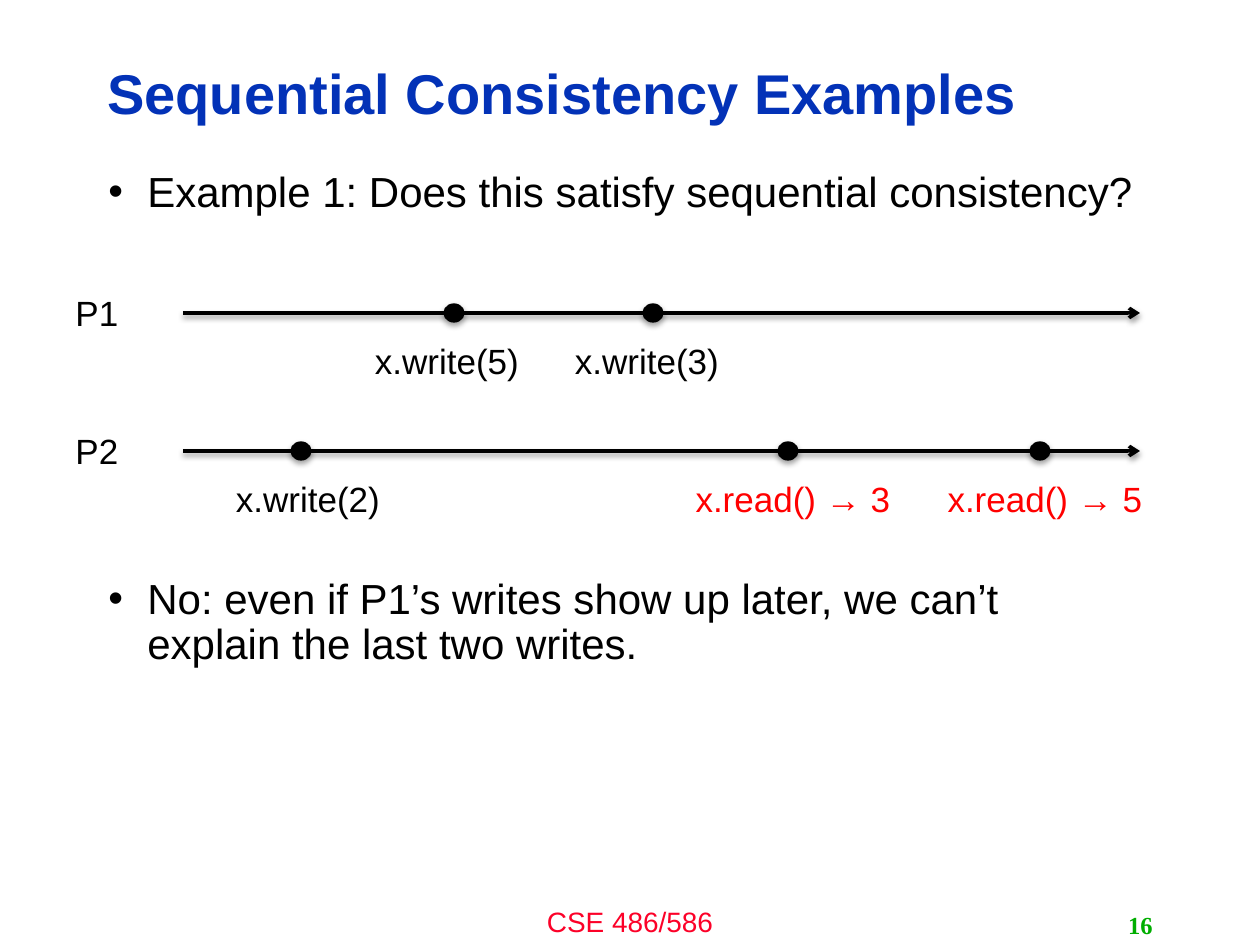
from lxml.etree import SubElement
from pptx import Presentation
from pptx.dml.color import RGBColor
from pptx.enum.shapes import MSO_CONNECTOR, MSO_SHAPE
from pptx.enum.text import MSO_ANCHOR, PP_ALIGN
from pptx.oxml import parse_xml
from pptx.oxml.ns import nsdecls, qn
from pptx.util import Pt

PX = 914400 / 126
COLORS = {"title": "0332B7", "text": "000000", "read": "FF0000",
          "footer": "FC0128", "number": "00AE00"}


def add_text(x, y, w, h, paragraphs, size, color, align=PP_ALIGN.LEFT,
             anchor=MSO_ANCHOR.TOP, font="Arial", bold=False):
    box = s.shapes.add_textbox(*[round(v * PX) for v in (x, y, w, h)])
    tf = box.text_frame
    tf.word_wrap = True
    tf.vertical_anchor = anchor
    for i, text in enumerate(paragraphs):
        p = tf.add_paragraph() if i else tf.paragraphs[0]
        p.alignment = align
        r = p.add_run()
        r.text = text
        r.font.name = font
        r.font.size = Pt(size)
        r.font.bold = bold
        r.font.color.rgb = RGBColor.from_string(COLORS[color])
    return box


def add_shadow(shape, dist, alpha):
    shape._element.spPr.append(parse_xml(
        f'<a:effectLst {nsdecls("a")}><a:outerShdw blurRad="40000" dist="{dist}" '
        f'dir="5400000" rotWithShape="0"><a:srgbClr val="000000">'
        f'<a:alpha val="{alpha}"/></a:srgbClr></a:outerShdw></a:effectLst>'))


prs = Presentation()
prs.slide_width = round(1260 * PX)
prs.slide_height = round(945 * PX)
s = prs.slides.add_slide(prs.slide_layouts[6])
black = RGBColor.from_string(COLORS["text"])

# Title, footer and page number
title = add_text(95, 45, 1005, 102, ["Sequential Consistency Examples"], 32, "title",
                 anchor=MSO_ANCHOR.MIDDLE, bold=True)
title.text_frame.paragraphs[0].line_spacing = 0.9
add_text(420, 898, 420, 47, ["CSE 486/586"], 16, "footer", PP_ALIGN.CENTER)
add_text(903, 905, 262, 40, ["16"], 14, "number", PP_ALIGN.RIGHT,
         MSO_ANCHOR.MIDDLE, "Times New Roman", True)

# Question above the timelines, answer below them
body = add_text(96, 165, 1058, 679, [
    "Example 1: Does this satisfy sequential consistency?",
    "No: even if P1’s writes show up later, we can’t explain the last two writes.",
], 24, "text")
for p in body.text_frame.paragraphs:
    p.line_spacing = 0.9
    pPr = p._p.get_or_add_pPr()
    pPr.set("marL", str(round(39 * PX)))
    pPr.set("indent", str(round(-39 * PX)))
    SubElement(pPr, qn("a:buFont"), typeface="Arial")
    SubElement(pPr, qn("a:buChar"), char="•")
body.text_frame.paragraphs[1].space_before = Pt(206.5)

# Process timelines: name, line y, events (dot x, label x, label, colour)
timelines = [
    ("P1", 313, [(454, 447, "x.write(5)", "text"),
                 (653, 647, "x.write(3)", "text")]),
    ("P2", 451, [(301, 308, "x.write(2)", "text"),
                 (788, 793, "x.read() → 3", "read"),
                 (1040, 1045, "x.read() → 5", "read")]),
]
for name, y, events in timelines:
    label = add_text(63, y - 28, 120, 56, [name], 20, "text")
    line = s.shapes.add_connector(
        MSO_CONNECTOR.STRAIGHT, round(183 * PX), round(y * PX),
        round(1140 * PX), round(y * PX))
    line.begin_connect(label, 3)
    line.line.color.rgb = black
    line.line.width = Pt(2)
    SubElement(line.line._get_or_add_ln(), qn("a:tailEnd"), type="arrow")
    add_shadow(line, 20000, 38000)

    for dot_x, label_x, text, color in events:
        dot = s.shapes.add_shape(
            MSO_SHAPE.OVAL, *[round(v * PX) for v in (dot_x - 10, y - 9, 20, 18)])
        dot.fill.solid()
        dot.fill.fore_color.rgb = black
        dot.line.color.rgb = black
        dot.line.width = Pt(0.75)
        add_shadow(dot, 23000, 35000)
        add_text(label_x - 214, y + 20, 428, 56, [text], 20, color, PP_ALIGN.CENTER)

prs.save("out.pptx")
